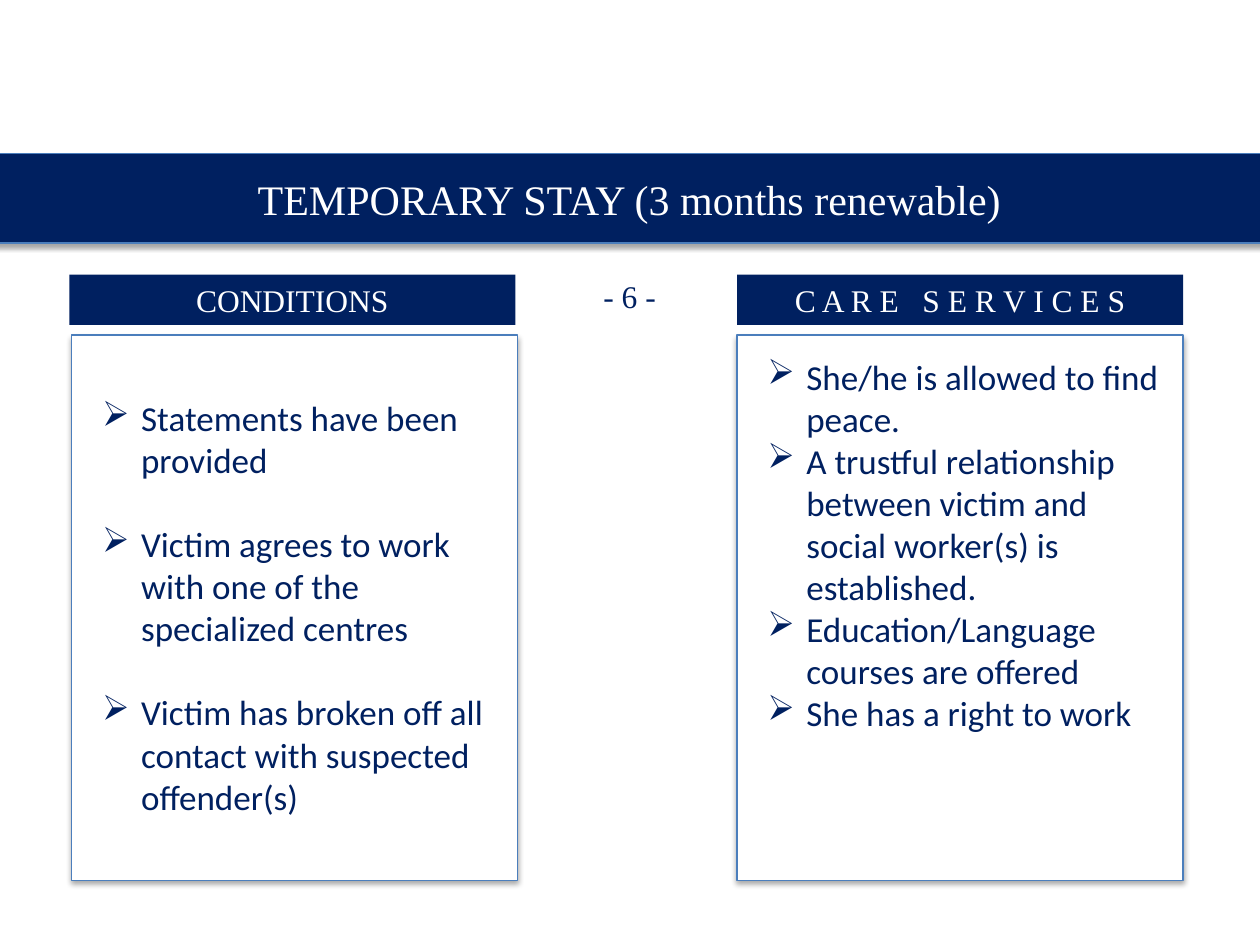
from pptx import Presentation
from pptx.dml.color import RGBColor
from pptx.enum.shapes import MSO_SHAPE as Shape
from pptx.enum.text import MSO_ANCHOR as Anchor, MSO_AUTO_SIZE as AutoSize, PP_ALIGN as Align
from pptx.oxml import parse_xml
from pptx.oxml.ns import nsdecls, qn
from pptx.util import Inches, Pt

COLORS = {"navy": "002060", "white": "FFFFFF", "edge": "4B7EBC", "shadow": "000000"}
SERIF, SANS = "Times New Roman", "Calibri"
COLUMN_WIDTH = 3.54
CONDITIONS = [
    "Statements have been provided",
    "Victim agrees to work with one of the specialized centres",
    "Victim has broken off all contact with suspected offender(s)",
]
SERVICES = [
    "She/he is allowed to find peace.",
    "A trustful relationship between victim and social worker(s) is established.",
    "Education/Language courses are offered",
    "She has a right to work",
]


def color(name):
    """Return the named colour."""
    return RGBColor.from_string(COLORS[name])


def apply(target, values):
    """Set each attribute of the target from a dict."""
    for name, value in values.items():
        setattr(target, name, value)


def write(para, text, size, font, ink):
    """Add one formatted span to a paragraph."""
    span = para.add_run()
    span.text = text
    apply(span.font, {"size": Pt(size), "name": font})
    span.font.color.rgb = color(ink)


def add_box(page, box, fill, edge=None):
    """Draw a filled rectangle, outlined and shadowed if an edge width is given."""
    shape = page.shapes.add_shape(Shape.RECTANGLE, *map(Inches, box))
    shape.shadow.inherit = False
    shape.fill.solid()
    shape.fill.fore_color.rgb = color(fill)
    if edge is None:
        shape.line.fill.background()
        return shape
    shape.line.color.rgb = color("edge")
    shape.line.width = Pt(edge)
    effects = shape._element.spPr.find(qn("a:effectLst"))
    effects.append(parse_xml(
        f'<a:outerShdw {nsdecls("a")} blurRad="{Pt(3.1)}" dist="{Pt(1.8)}" dir="5400000" rotWithShape="0">'
        f'<a:srgbClr val="{COLORS["shadow"]}"><a:alpha val="35000"/></a:srgbClr></a:outerShdw>'))
    return shape


def add_title(page, box, text):
    """Draw the title band."""
    frame = add_box(page, box, "navy", 0.75).text_frame
    apply(frame, {"vertical_anchor": Anchor.MIDDLE, "word_wrap": True})
    para = frame.paragraphs[0]
    para.alignment = Align.CENTER
    write(para, text, 24, SERIF, "white")


def add_panel(page, box, items, top, gap):
    """Draw a bulleted panel with a top inset and a gap between items."""
    frame = add_box(page, box, "white", 0).text_frame
    apply(frame, {"vertical_anchor": Anchor.TOP, "word_wrap": True, "margin_left": Inches(0.24),
                  "margin_top": Inches(top), "margin_right": Inches(0.1), "margin_bottom": Inches(0.05)})
    for index, item in enumerate(items):
        para = frame.add_paragraph() if index else frame.paragraphs[0]
        apply(para, {"alignment": Align.LEFT, "space_before": Pt(gap if index else 0)})
        props = para._p.get_or_add_pPr()
        props.set("marL", str(Inches(0.31)))
        props.set("indent", str(-Inches(0.31)))
        props.append(parse_xml(f'<a:buChar {nsdecls("a")} char="➢"/>'))
        write(para, item, 20, SANS, "navy")


def add_heading(page, box, text):
    """Draw a column heading."""
    frame = add_box(page, box, "navy").text_frame
    apply(frame, {"vertical_anchor": Anchor.TOP, "word_wrap": True, "auto_size": AutoSize.SHAPE_TO_FIT_TEXT})
    para = frame.paragraphs[0]
    para.alignment = Align.CENTER
    write(para, text, 18, SERIF, "white")


def add_page_number(page, box, text):
    """Place the page number."""
    frame = page.shapes.add_textbox(*map(Inches, box)).text_frame
    apply(frame, {"word_wrap": False, "auto_size": AutoSize.SHAPE_TO_FIT_TEXT})
    write(frame.paragraphs[0], text, 18, SERIF, "navy")


def main():
    """Build and save the slide."""
    deck = Presentation()
    apply(deck, {"slide_width": Inches(10), "slide_height": Inches(7.5)})
    page = deck.slides.add_slide(deck.slide_layouts[6])
    add_title(page, (-0.09, 1.22, 10.17, 0.71), "TEMPORARY STAY (3 months renewable)")
    add_panel(page, (0.57, 2.66, COLUMN_WIDTH, 4.33), CONDITIONS, 0.49, 24)
    add_panel(page, (5.85, 2.66, COLUMN_WIDTH, 4.33), SERVICES, 0.16, 0)
    add_heading(page, (0.55, 2.18, COLUMN_WIDTH, 0.4), "CONDITIONS")
    add_heading(page, (5.85, 2.18, COLUMN_WIDTH, 0.4), "C A R E   S E R V I C E S")
    add_page_number(page, (4.69, 2.15, 0.62, 0.4), "- 6 -")
    deck.save("out.pptx")


if __name__ == "__main__":
    main()
